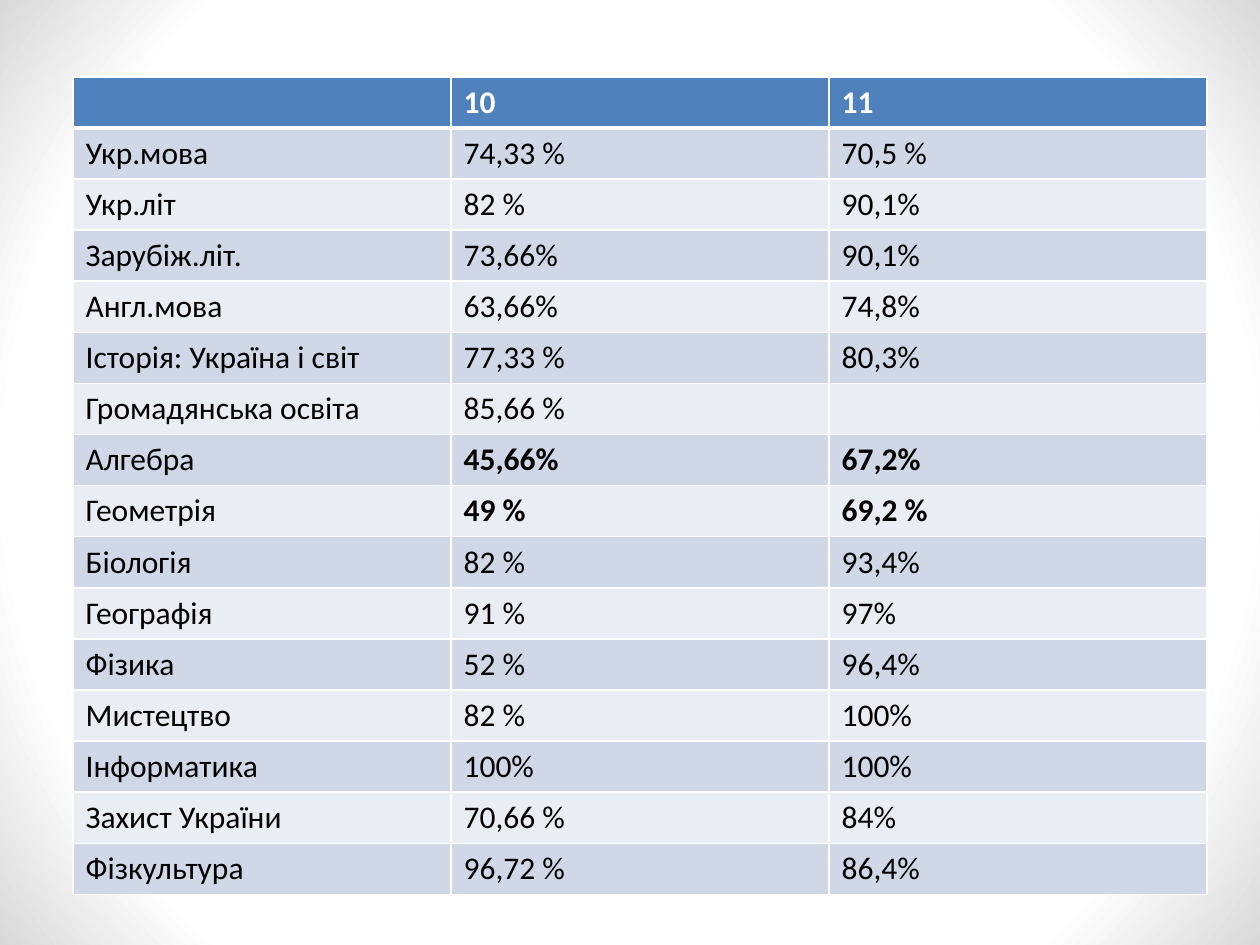
from lxml.etree import SubElement
from pptx import Presentation
from pptx.dml.color import RGBColor as RGB
from pptx.oxml import parse_xml
from pptx.oxml.ns import nsdecls, qn
from pptx.util import Inches, Pt

COLORS = {
    "white": "FFFFFF", "edge": "D9D9D9", "header": "4F81BD",
    "band_dark": "D0D8E8", "band_light": "E9EDF4", "text": "000000",
}
HEADER = ("", "10", "11")
RESULTS = [
    ("Укр.мова", "74,33 %", "70,5 %"),
    ("Укр.літ", "82 %", "90,1%"),
    ("Зарубіж.літ.", "73,66%", "90,1%"),
    ("Англ.мова", "63,66%", "74,8%"),
    ("Історія: Україна і світ", "77,33 %", "80,3%"),
    ("Громадянська освіта", "85,66 %", ""),
    ("Алгебра", "45,66%", "67,2%"),
    ("Геометрія", "49 %", "69,2 %"),
    ("Біологія", "82 %", "93,4%"),
    ("Географія", "91 %", "97%"),
    ("Фізика", "52 %", "96,4%"),
    ("Мистецтво", "82 %", "100%"),
    ("Інформатика", "100%", "100%"),
    ("Захист України", "70,66 %", "84%"),
    ("Фізкультура", "96,72 %", "86,4%"),
]
BOLD_SUBJECTS = {"Алгебра", "Геометрія"}


def set_background(s):
    """White centre fading to grey in the corners."""
    fill = s.background.fill
    fill.gradient()
    stops = fill.gradient_stops
    for stop, position, name in zip(stops, (0.79, 1), ("white", "edge")):
        stop.position = position
        stop.color.rgb = RGB.from_string(COLORS[name])
    grad = s.background._cSld.bg.bgPr.find(qn("a:gradFill"))
    grad.remove(grad.find(qn("a:lin")))
    circle = SubElement(grad, qn("a:path"), path="circle")
    SubElement(circle, qn("a:fillToRect"), l="50000", t="50000", r="50000", b="50000")


def set_borders(cell, bottom):
    widths = {"lnL": 1, "lnR": 1, "lnT": 1, "lnB": bottom}
    tc_pr = cell._tc.get_or_add_tcPr()
    for i, (side, width) in enumerate(widths.items()):
        tc_pr.insert(i, parse_xml(
            f'<a:{side} {nsdecls("a")} w="{Pt(width)}"><a:solidFill>'
            f'<a:srgbClr val="{COLORS["white"]}"/></a:solidFill></a:{side}>'))


def format_cell(cell, text, fill, color, bold, bottom):
    cell.fill.solid()
    cell.fill.fore_color.rgb = RGB.from_string(COLORS[fill])
    set_borders(cell, bottom)
    cell.text = text
    for r in cell.text_frame.paragraphs[0].runs:
        r.font.name = "Calibri"
        r.font.size = Pt(18)
        r.font.bold = bold
        r.font.color.rgb = RGB.from_string(COLORS[color])


def add_results_table(s, left, top, width, height):
    rows = [HEADER] + RESULTS
    table = s.shapes.add_table(len(rows), len(HEADER), left, top, width, height).table
    for i, row in enumerate(rows):
        is_header = i == 0
        fill = "header" if is_header else ("band_light", "band_dark")[i % 2]
        # A thick rule separates the header from the body
        bottom = 3 if is_header else 1
        for j, text in enumerate(row):
            bold = is_header or (j > 0 and row[0] in BOLD_SUBJECTS)
            format_cell(table.cell(i, j), text, fill,
                        "white" if is_header else "text", bold, bottom)
            if i == 1:
                top_line = table.cell(i, j)._tc.tcPr.find(qn("a:lnT"))
                top_line.set("w", str(Pt(3)))


def main():
    prs = Presentation()
    prs.slide_width, prs.slide_height = Inches(10), Inches(7.5)
    s = prs.slides.add_slide(prs.slide_layouts[6])
    set_background(s)
    add_results_table(s, Inches(0.58), Inches(0.61), Inches(9), Inches(6.49))
    prs.save("out.pptx")


if __name__ == "__main__":
    main()
